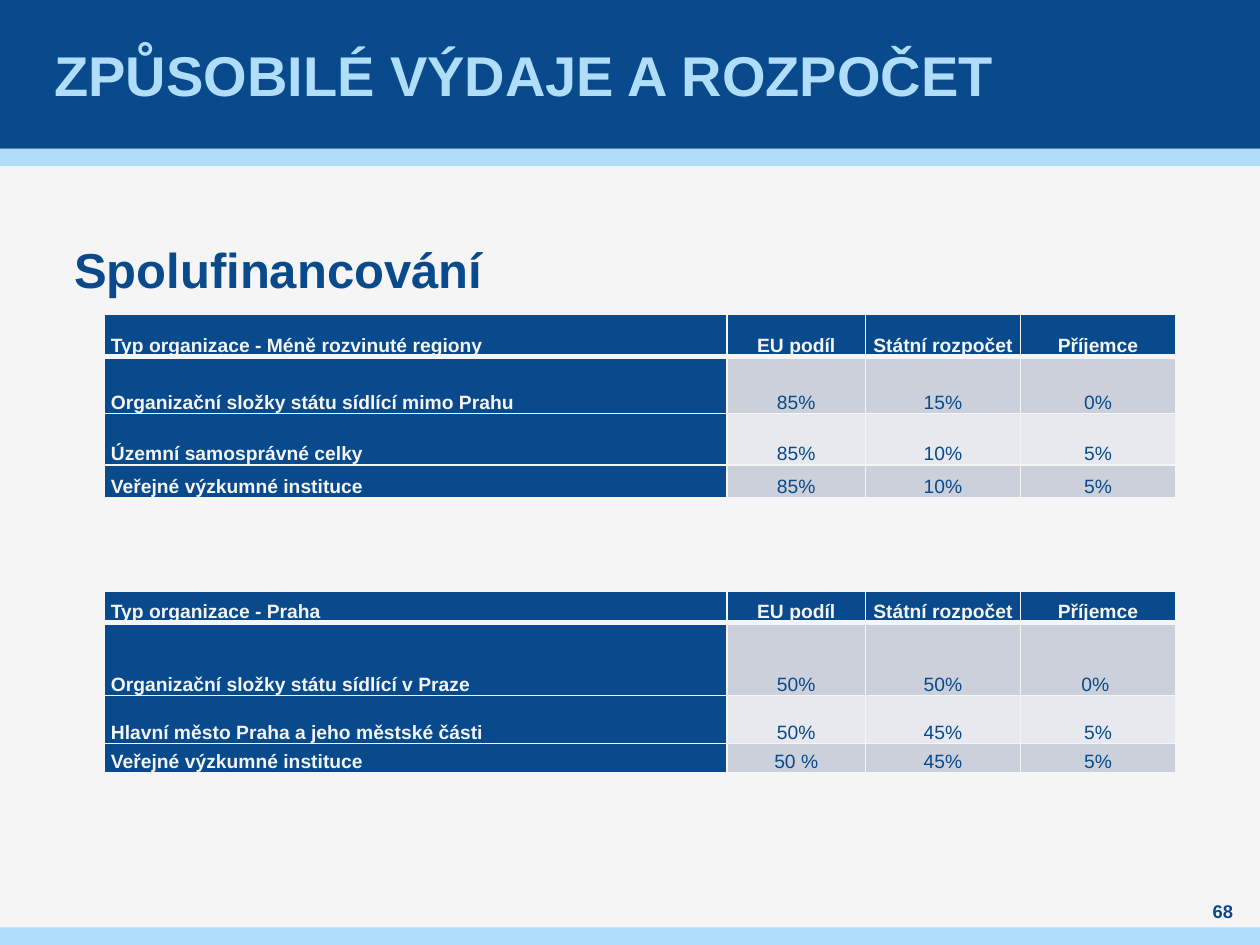
from dataclasses import dataclass

from lxml import etree
from pptx import Presentation
from pptx.dml.color import RGBColor
from pptx.enum.shapes import MSO_SHAPE
from pptx.enum.text import MSO_ANCHOR, PP_ALIGN
from pptx.oxml.ns import qn
from pptx.util import Inches, Pt

RECTANGLE = MSO_SHAPE.RECTANGLE
TOP, MIDDLE, BOTTOM = MSO_ANCHOR.TOP, MSO_ANCHOR.MIDDLE, MSO_ANCHOR.BOTTOM
LEFT, CENTER = PP_ALIGN.LEFT, PP_ALIGN.CENTER

NAVY, SKY, PAPER = "084A8B", "AFDDFA", "F5F5F5"
BAND_FILLS = ("E7E9EE", "CCD0DA")  # even and odd body rows
COLUMN_WIDTHS = (4.94, 1.1, 1.23, 1.23)
SHARE_HEADERS = ("EU podíl", "Státní rozpočet ", "Příjemce")


@dataclass
class Bar:
    top: float
    height: float
    color: str


@dataclass
class TextBlock:
    text: str
    box: tuple[float, float, float, float]
    size: float
    color: str
    anchor: MSO_ANCHOR
    paragraph_format: dict
    side_inset: float = 0


@dataclass
class FundingTable:
    top: float
    row_heights: tuple[float, ...]
    rows: list[tuple[str, ...]]


BARS = [Bar(1.18, 0.14, SKY), Bar(0, 1.18, NAVY), Bar(7.36, 0.14, SKY)]

TEXTS = [
    TextBlock("ZPŮSOBILÉ VÝDAJE A ROZPOČET", (0.39, 0, 9.21, 1.18), 32, SKY, MIDDLE,
              {"alignment": LEFT}, 0.04),
    TextBlock("Spolufinancování", (0.59, 1.97, 8.82, 4.72), 28, NAVY, TOP,
              {"alignment": LEFT, "line_spacing": Pt(28.8),
               "space_before": Pt(6), "space_after": Pt(6)}),
    TextBlock("68", (9.45, 7.13, 0.51, 0.2), 10.5, NAVY, MIDDLE, {"alignment": CENTER}),
]

TABLES = [
    FundingTable(2.49, (0.34, 0.45, 0.41, 0.26), [
        ("Typ organizace - Méně rozvinuté regiony", *SHARE_HEADERS),
        ("Organizační složky státu sídlící mimo Prahu", "85%", "15%", "0%"),
        ("Územní samosprávné celky", "85%", "10%", "5%"),
        ("Veřejné výzkumné instituce", "85%", "10%", "5%"),
    ]),
    FundingTable(4.69, (0.25, 0.58, 0.38, 0.23), [
        ("Typ organizace - Praha", *SHARE_HEADERS),
        ("Organizační složky státu sídlící v Praze", "50%", "50%", "0% "),
        ("Hlavní město Praha a jeho městské části", "50%", "45%", "5%"),
        ("Veřejné výzkumné instituce", "50 %", "45%", "5%"),
    ]),
]


def set_color(color_format, color: str) -> None:
    color_format.rgb = RGBColor.from_string(color)


def set_fill(fill, color: str) -> None:
    fill.solid()
    set_color(fill.fore_color, color)


def set_attributes(target, values: dict) -> None:
    for name, value in values.items():
        setattr(target, name, value)


def write_text(paragraph, text: str, size: float, color: str, bold: bool,
               paragraph_format: dict) -> None:
    set_attributes(paragraph, paragraph_format)
    run = paragraph.add_run()
    run.text = text
    set_attributes(run.font, {"name": "Arial", "size": Pt(size), "bold": bold})
    set_color(run.font.color, color)


def add_bar(slide, bar: Bar) -> None:
    shape = slide.shapes.add_shape(RECTANGLE, 0, Inches(bar.top), Inches(10), Inches(bar.height))
    shape.shadow.inherit = False
    set_fill(shape.fill, bar.color)
    shape.line.fill.background()


def add_text(slide, block: TextBlock) -> None:
    frame = slide.shapes.add_textbox(*map(Inches, block.box)).text_frame
    set_attributes(frame, {
        "word_wrap": True, "vertical_anchor": block.anchor,
        "margin_left": Inches(block.side_inset), "margin_right": Inches(block.side_inset),
        "margin_top": 0, "margin_bottom": 0,
    })
    write_text(frame.paragraphs[0], block.text, block.size, block.color, True,
               block.paragraph_format)


def set_borders(cell, widths: dict[str, float]) -> None:
    """Draw the cell's borders; their elements must come before the fill."""
    properties = cell._tc.get_or_add_tcPr()
    for index, (side, width) in enumerate(widths.items()):
        line = etree.Element(qn(f"a:ln{side}"), w=str(Pt(width)))
        solid = etree.SubElement(line, qn("a:solidFill"))
        etree.SubElement(solid, qn("a:srgbClr"), val=PAPER)
        properties.insert(index, line)


def add_funding_table(slide, funding: FundingTable) -> None:
    frame = slide.shapes.add_table(
        len(funding.rows), len(COLUMN_WIDTHS), Inches(0.83), Inches(funding.top),
        Inches(sum(COLUMN_WIDTHS)), Inches(sum(funding.row_heights)))
    table = frame.table
    for column, width in zip(table.columns, COLUMN_WIDTHS):
        column.width = Inches(width)
    for row, height in zip(table.rows, funding.row_heights):
        row.height = Inches(height)
    for row_index, texts in enumerate(funding.rows):
        for column_index, text in enumerate(texts):
            cell = table.cell(row_index, column_index)
            is_heading = row_index == 0 or column_index == 0
            set_attributes(cell, {
                "vertical_anchor": BOTTOM, "margin_left": Inches(0.05),
                "margin_right": Inches(0.05), "margin_top": 0, "margin_bottom": 0,
            })
            set_fill(cell.fill, NAVY if is_heading else BAND_FILLS[row_index % 2])
            set_borders(cell, {"L": 1, "R": 1, "T": 3 if row_index == 1 else 1,
                               "B": 3 if row_index == 0 else 1})
            write_text(cell.text_frame.paragraphs[0], text, 11,
                       PAPER if is_heading else NAVY, is_heading,
                       {"alignment": CENTER if column_index else LEFT, "line_spacing": 1.15})


def main() -> None:
    presentation = Presentation()
    presentation.slide_width, presentation.slide_height = Inches(10), Inches(7.5)
    slide = presentation.slides.add_slide(presentation.slide_layouts[6])
    set_fill(slide.background.fill, PAPER)
    for bar in BARS:
        add_bar(slide, bar)
    for block in TEXTS:
        add_text(slide, block)
    for funding in TABLES:
        add_funding_table(slide, funding)
    presentation.save("out.pptx")


if __name__ == "__main__":
    main()
